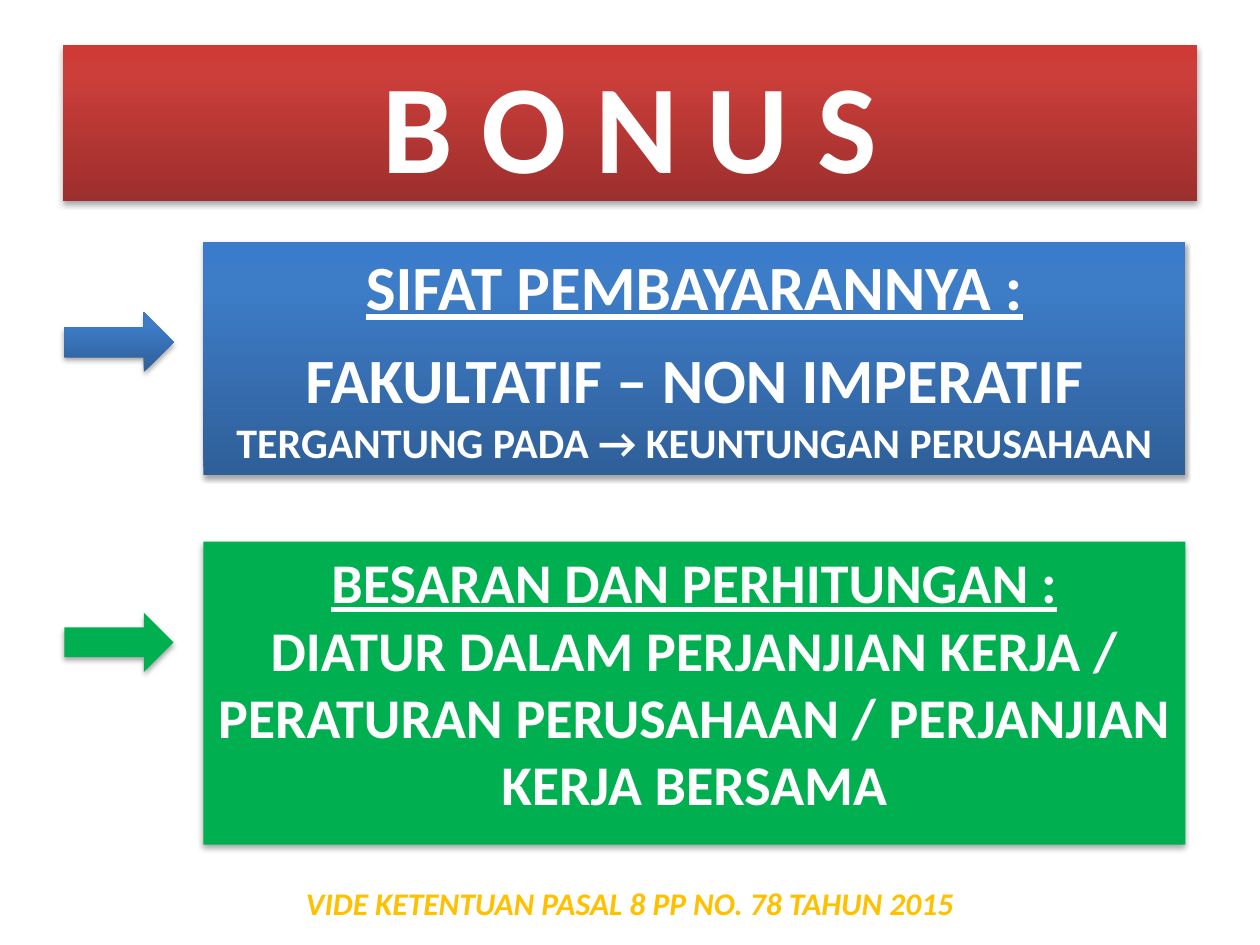
"""Build the slide on the nature and amount of the bonus."""
from copy import deepcopy

from pptx import Presentation
from pptx.dml.color import RGBColor
from pptx.enum.shapes import MSO_SHAPE
from pptx.enum.text import MSO_ANCHOR, PP_ALIGN
from pptx.oxml.ns import qn
from pptx.util import Cm, Pt

WHITE = RGBColor(0xFF, 0xFF, 0xFF)
GREEN = RGBColor(0x00, 0xB0, 0x50)
GOLD = RGBColor(0xFF, 0xC0, 0x00)
REDS = [RGBColor(0x9C, 0x2F, 0x2D), RGBColor(0xCB, 0x3E, 0x3A), RGBColor(0xCE, 0x3B, 0x37)]
BLUES = [RGBColor(0x2F, 0x5F, 0x99), RGBColor(0x3D, 0x7C, 0xC7), RGBColor(0x3A, 0x7C, 0xCB)]


def add_block(preset, left, top, width, height, colors):
    shape = slide.shapes.add_shape(preset, Cm(left), Cm(top), Cm(width), Cm(height))
    shape.line.fill.background()
    if len(colors) == 1:
        shape.fill.solid()
        shape.fill.fore_color.rgb = colors[0]
        return shape
    shape.fill.gradient()
    shape.fill.gradient_angle = 90
    stop_list = next(shape._element.spPr.iter(qn("a:gsLst")))
    stop_list.append(deepcopy(stop_list[-1]))
    for stop, position, color in zip(shape.fill.gradient_stops, (0, 0.8, 1), colors):
        stop.position = position
        stop.color.rgb = color
    return shape


def write_lines(shape, lines, color, anchor=MSO_ANCHOR.TOP):
    text_frame = shape.text_frame
    text_frame.word_wrap = True
    text_frame.vertical_anchor = anchor
    text_frame.text = "\n".join(text for text, size, underline, gap in lines)
    for paragraph, (text, size, underline, gap) in zip(text_frame.paragraphs, lines):
        paragraph.alignment = PP_ALIGN.CENTER
        paragraph.space_before = Pt(gap)
        font = paragraph.runs[0].font
        font.name = "Calibri"
        font.size = Pt(size)
        font.bold = True
        font.underline = underline
        font.color.rgb = color


presentation = Presentation()
presentation.slide_width = Cm(25.4)
presentation.slide_height = Cm(19.05)
slide = presentation.slides.add_slide(presentation.slide_layouts[6])

title = add_block(MSO_SHAPE.RECTANGLE, 1.27, 0.9, 22.86, 3.15, REDS)
write_lines(title, [("B O N U S", 72, False, 0)], WHITE, MSO_ANCHOR.MIDDLE)

sections = [
    (4.87, 4.71, BLUES, [
        ("SIFAT PEMBAYARANNYA :", 36, True, 0),
        ("FAKULTATIF – NON IMPERATIF", 36, False, 9.8),
        ("TERGANTUNG PADA → KEUNTUNGAN PERUSAHAAN", 24, False, 0),
    ]),
    (10.92, 6.11, [GREEN], [
        ("BESARAN DAN PERHITUNGAN :", 32, True, 0),
        ("DIATUR DALAM PERJANJIAN KERJA / PERATURAN PERUSAHAAN / "
         "PERJANJIAN KERJA BERSAMA", 32, False, 0),
    ]),
]
for top, height, colors, lines in sections:
    panel = add_block(MSO_SHAPE.RECTANGLE, 4.1, top, 19.8, height, colors)
    write_lines(panel, lines, WHITE)
    add_block(MSO_SHAPE.RIGHT_ARROW, 1.3, top + 1.43, 2.2, 1.2, colors)

source_note = slide.shapes.add_textbox(Cm(1.5), Cm(17.7), Cm(22.4), Cm(1.03))
write_lines(source_note, [("VIDE KETENTUAN PASAL 8 PP NO. 78 TAHUN 2015", 18, False, 0)], GOLD)
source_note.text_frame.paragraphs[0].runs[0].font.italic = True

presentation.save("out.pptx")
